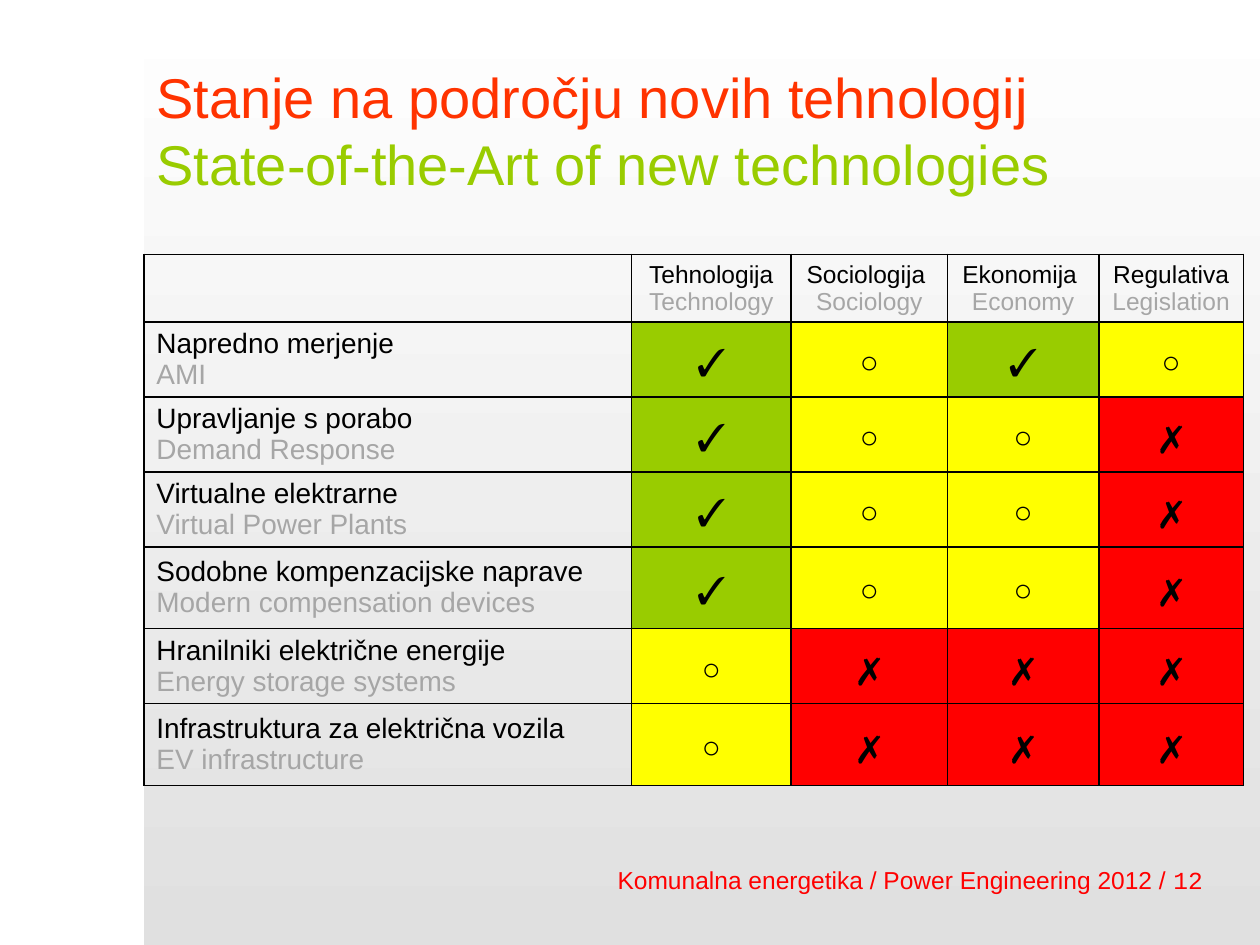
"""Build the slide on the state of new energy technologies."""
from lxml import etree
from pptx import Presentation
from pptx import util as u
from pptx.dml import color
from pptx.enum import shapes, text
from pptx.oxml import ns

HEAD = [("Tehnologija", "Technology"), ("Sociologija ", "Sociology"),
        ("Ekonomija ", "Economy"), ("Regulativa", "Legislation")]
ROWS = [
    ("Napredno merjenje", "AMI", "✓○✓○"),
    ("Upravljanje s porabo", "Demand Response", "✓○○✗"),
    ("Virtualne elektrarne", "Virtual Power Plants", "✓○○✗"),
    ("Sodobne kompenzacijske naprave", "Modern compensation devices", "✓○○✗"),
    ("Hranilniki električne energije", "Energy storage systems", "○✗✗✗"),
    ("Infrastruktura za električna vozila", "EV infrastructure", "○✗✗✗"),
]
TITLE = ("Stanje na področju novih tehnologij", "State-of-the-Art of new technologies")
FOOT = ("Komunalna energetika / Power Engineering 2012 / ", "12")

THEME = {
    "sans": "Arial", "mono": "Courier New", "serif": "Times New Roman",
    "white": "FFFFFF", "shade": "E0E0E0", "ink": "000000", "dim": "A6A6A6",
    "first": "FF3300", "next": "99CC00", "foot": "FF0000",
    "big": 32, "label": 16, "small": 14,
}
MARKS = {
    "✓": {"fill": "99CC00", "size": 22, "bold": True},
    "○": {"fill": "FFFF00", "size": 18, "bold": False},
    "✗": {"fill": "FF0000", "size": 22, "bold": False},
}
LEFT = 2.9
COLS = [9.83, 3.22, 3.15, 3.05, 2.92]
TALL = [0.79, 1.45, 1.45, 1.45, 1.65, 1.45, 1.65]
MID = text.PP_ALIGN.CENTER
SPACED = {"line_spacing": 1.2, "space_before": u.Pt(6), "space_after": u.Pt(6)}


def apply(item, form):
    """Set each attribute in the dict."""
    for key, val in form.items():
        setattr(item, key, val)


def rgb(name):
    """Give the colour for a theme name or a hex value."""
    return color.RGBColor.from_string(THEME.get(name, name))


def paint(fill, name):
    """Fill with one flat colour."""
    fill.solid()
    fill.fore_color.rgb = rgb(name)


def write(par, words, face, size, ink, bold=False):
    """Add a formatted run to a paragraph."""
    run = par.add_run()
    run.text = words
    apply(run.font, {"name": THEME[face], "size": u.Pt(size), "bold": bold})
    run.font.color.rgb = rgb(ink)


def pair(cell, words, size, align):
    """Write a Slovene line over an English line."""
    frame = cell.text_frame
    for num, (line, ink) in enumerate(zip(words, ("ink", "dim"))):
        par = frame.add_paragraph() if num else frame.paragraphs[0]
        par.alignment = align
        write(par, line, "sans", size, ink)


def mark(cell, sign):
    """Write a rating sign on its colour."""
    form = MARKS[sign]
    paint(cell.fill, form["fill"])
    par = cell.text_frame.paragraphs[0]
    apply(par, {"alignment": MID, **SPACED})
    write(par, sign, "serif", form["size"], "ink", form["bold"])


def frame(cell):
    """Draw thin black borders round a cell."""
    props = cell._tc.get_or_add_tcPr()
    for num, side in enumerate(("lnL", "lnR", "lnT", "lnB")):
        line = etree.Element(ns.qn("a:" + side), w=str(u.Pt(1)))
        solid = etree.SubElement(line, ns.qn("a:solidFill"))
        etree.SubElement(solid, ns.qn("a:srgbClr"), val=THEME["ink"])
        props.insert(num, line)


def back(slide):
    """Lay the grey gradient and the white side band."""
    fill = slide.background.fill
    fill.gradient()
    fill.gradient_angle = 270
    for num, (stop, name) in enumerate(zip(fill.gradient_stops, ("white", "shade"))):
        stop.position = num
        stop.color.rgb = rgb(name)
    band = slide.shapes.add_shape(shapes.MSO_SHAPE.RECTANGLE, 0, 0, u.Cm(LEFT), u.Cm(19.05))
    band.shadow.inherit = False
    paint(band.fill, "white")
    band.line.fill.background()


def title(slide):
    """Fill the title placeholder with both languages."""
    box = slide.shapes.title
    apply(box, {"left": u.Cm(LEFT), "top": u.Cm(1.32), "width": u.Cm(20.6), "height": u.Cm(2.6)})
    apply(box.text_frame, {"vertical_anchor": text.MSO_ANCHOR.MIDDLE, "word_wrap": True,
                           "auto_size": text.MSO_AUTO_SIZE.NONE})
    par = box.text_frame.paragraphs[0]
    par.alignment = text.PP_ALIGN.LEFT
    write(par, TITLE[0], "sans", THEME["big"], "first")
    par.add_line_break()
    write(par, TITLE[1], "sans", THEME["big"], "next")


def grid(slide):
    """Build the rating table."""
    table = slide.shapes.add_table(len(TALL), len(COLS), u.Cm(LEFT), u.Cm(5.13),
                                   u.Cm(sum(COLS)), u.Cm(sum(TALL))).table
    apply(table, {"first_row": False, "horz_banding": False})
    for col, wide in zip(table.columns, COLS):
        col.width = u.Cm(wide)
    for row, tall in zip(table.rows, TALL):
        row.height = u.Cm(tall)
    for cell in table.iter_cells():
        cell.vertical_anchor = text.MSO_ANCHOR.MIDDLE
        cell.fill.background()
        frame(cell)
    table.cell(0, 0).text_frame.paragraphs[0].font.size = u.Pt(THEME["small"])
    for col, words in enumerate(HEAD, 1):
        pair(table.cell(0, col), words, THEME["small"], MID)
    for row, (*words, signs) in enumerate(ROWS, 1):
        pair(table.cell(row, 0), words, THEME["label"], text.PP_ALIGN.LEFT)
        for col, sign in enumerate(signs, 1):
            mark(table.cell(row, col), sign)


def foot(slide):
    """Write the event name and page number."""
    box = slide.shapes.add_textbox(u.Cm(11.5), u.Cm(17.32), u.Cm(13), u.Cm(1.27))
    box.text_frame.word_wrap = True
    par = box.text_frame.paragraphs[0]
    par.alignment = text.PP_ALIGN.RIGHT
    for words, face in zip(FOOT, ("sans", "mono")):
        write(par, words, face, THEME["small"], "foot")


def main():
    """Make and save the deck."""
    deck = Presentation()
    apply(deck, {"slide_width": u.Cm(25.4), "slide_height": u.Cm(19.05)})
    slide = deck.slides.add_slide(deck.slide_layouts[5])
    for part in (back, title, grid, foot):
        part(slide)
    deck.save("out.pptx")


if __name__ == "__main__":
    main()
